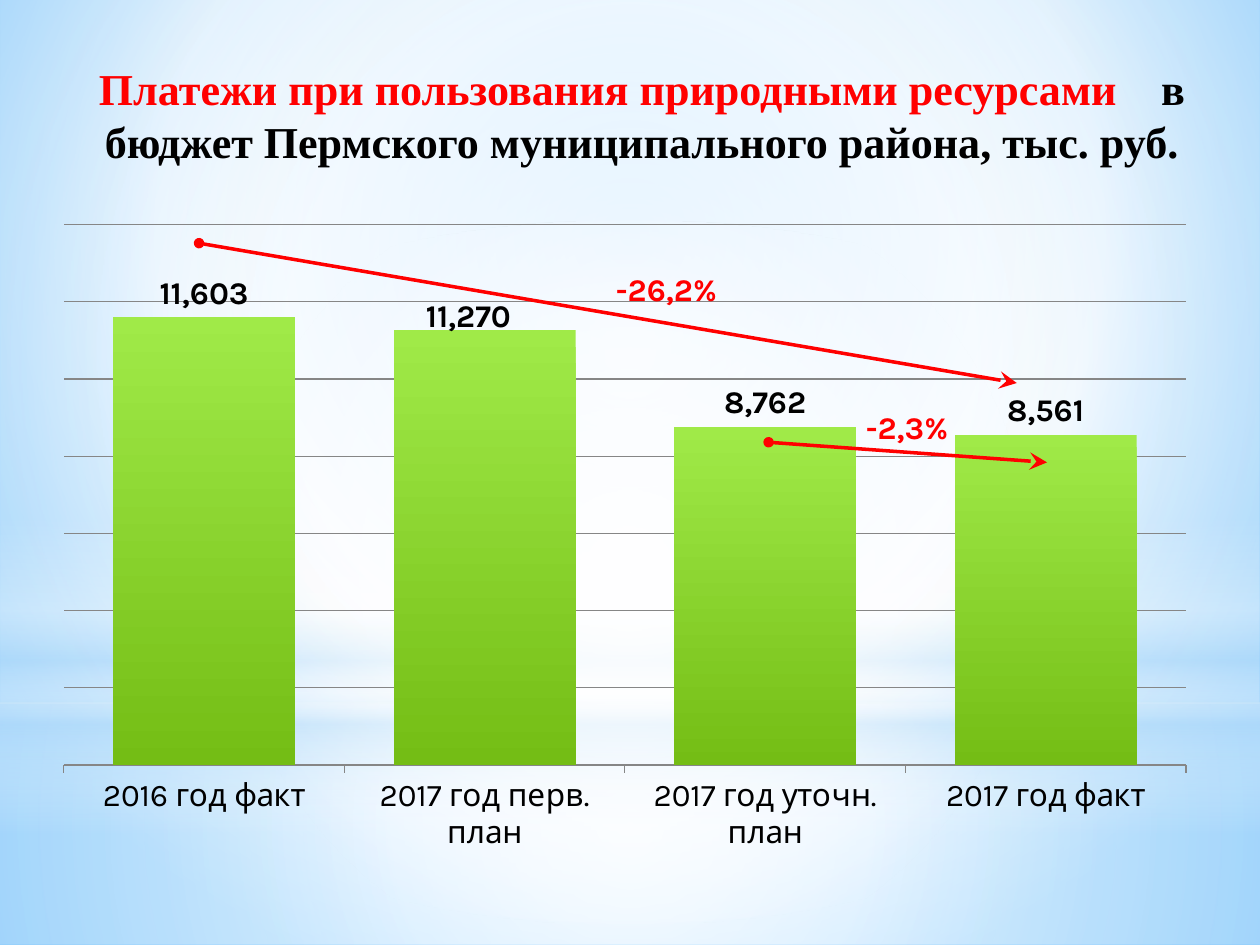
from lxml.etree import SubElement
from pptx import Presentation
from pptx.chart.data import CategoryChartData
from pptx.dml.color import RGBColor
from pptx.enum.chart import XL_CHART_TYPE as ChartType, XL_LABEL_POSITION as LabelPosition
from pptx.enum.chart import XL_TICK_LABEL_POSITION as TickLabels, XL_TICK_MARK as TickMark
from pptx.enum.shapes import MSO_CONNECTOR as Connector, MSO_SHAPE as Shape
from pptx.enum.text import MSO_ANCHOR as Anchor, PP_ALIGN as Align
from pptx.oxml.ns import qn
from pptx.util import Inches, Pt

BLACK = RGBColor(0x00, 0x00, 0x00)
RED = RGBColor(0xFF, 0x00, 0x00)
WHITE = RGBColor(0xFF, 0xFF, 0xFF)
GRAY = RGBColor(0x86, 0x86, 0x86)
SKY = RGBColor(0x9E, 0xD5, 0xFF)
DEEP_SKY = RGBColor(0x5B, 0xB9, 0xFF)
PALE_BLUE = RGBColor(0xB4, 0xDC, 0xFA)
LIGHT_GREEN = RGBColor(0xA0, 0xEA, 0x48)
GREEN = RGBColor(0x74, 0xBD, 0x15)
BODY_FONT, TITLE_FONT = "Karla", "Times New Roman"
CENTER = (50, 50, 50, 50)


def add_node(parent, tag, **attributes):
    return SubElement(parent, qn(tag), {name: str(value) for name, value in attributes.items()})


def set_gradient(fill, owner, stops, focus=None):
    """Stops are (position, colour, opacity); without a focus the fill runs downwards."""
    fill.solid()
    solid = next(owner.iter(qn("a:solidFill")))
    gradient = add_node(solid.getparent(), "a:gradFill", rotWithShape=1)
    solid.getparent().replace(solid, gradient)
    stop_list = add_node(gradient, "a:gsLst")
    for position, color, opacity in stops:
        stop = add_node(stop_list, "a:gs", pos=position * 1000)
        add_node(add_node(stop, "a:srgbClr", val=color), "a:alpha", val=opacity * 1000)
    if focus:
        shade = add_node(gradient, "a:path", path="circle")
        sides = {side: share * 1000 for side, share in zip("ltrb", focus)}
        add_node(shade, "a:fillToRect", **sides)
    else:
        add_node(gradient, "a:lin", ang=5400000, scaled=0)


def add_backdrop(page):
    backdrop = [(0, SKY, 100), (60, WHITE, 100), (100, DEEP_SKY, 100)]
    set_gradient(page.background.fill, page.element, backdrop, (20, 10, 20, 60))
    layers = [
        (Shape.RECTANGLE, 5.58, 1.92, CENTER,
         [(0, WHITE, 91), (37, WHITE, 76), (100, PALE_BLUE, 79)]),
        (Shape.RECTANGLE, 0, 5.58, CENTER,
         [(0, WHITE, 89), (48, WHITE, 62), (100, PALE_BLUE, 79)]),
        (Shape.RECTANGLE, 4.12, 2.5, None,
         [(0, WHITE, 0), (29, WHITE, 30), (45, PALE_BLUE, 40),
          (55, WHITE, 26), (65, PALE_BLUE, 60), (100, WHITE, 0)]),
        (Shape.OVAL, 1.75, 5.58, CENTER, [(0, WHITE, 100), (56, WHITE, 0)]),
    ]
    for kind, top, height, focus, stops in layers:
        layer = page.shapes.add_shape(kind, 0, Inches(top), Inches(10), Inches(height))
        layer.shadow.inherit = False
        layer.line.fill.background()
        set_gradient(layer.fill, layer.element.spPr, stops, focus)


def add_title(page, left, top, width, height):
    box = page.shapes.add_textbox(left, top, width, height)
    frame = box.text_frame
    frame.word_wrap = True
    frame.vertical_anchor = Anchor.MIDDLE
    para = frame.paragraphs[0]
    para.alignment = Align.CENTER
    para.font.name, para.font.size, para.font.bold = TITLE_FONT, Pt(25.2), True
    parts = [
        ("Платежи при пользования природными ресурсами", RED),
        (" ", RED),
        ("в бюджет Пермского муниципального района, тыс. руб.", BLACK),
    ]
    for text, color in parts:
        span = para.add_run()
        span.text = text
        span.font.color.rgb = color
    # One widened space parts the red words from the black ones
    para.runs[1].font._element.set("spc", "1900")


def add_layout(parent, index, **settings):
    layout = add_node(parent, "c:layout")
    manual = add_node(layout, "c:manualLayout")
    for name, value in settings.items():
        add_node(manual, f"c:{name}", val=value)
    parent.insert(index, layout)


def add_payment_chart(page, left, top, width, height):
    data = CategoryChartData(number_format="#,##0")
    data.categories = ["2016 год факт", "2017 год перв. план",
                       "2017 год уточн. план", "2017 год факт"]
    data.add_series("Series 1", (11603, 11270, 8762, 8561))
    chart = page.shapes.add_chart(
        ChartType.COLUMN_CLUSTERED, left, top, width, height, data).chart
    chart.has_legend = chart.has_title = False
    chart.font.name, chart.font.size = BODY_FONT, Pt(18)
    chart.font.color.rgb = BLACK

    # Axes
    values = chart.value_axis
    values.minimum_scale, values.maximum_scale, values.major_unit = 0, 14000, 2000
    values.has_major_gridlines = True
    values.major_gridlines.format.line.color.rgb = GRAY
    values.tick_labels.number_format = "#,##0"
    values.visible = False
    categories = chart.category_axis
    categories.major_tick_mark = TickMark.OUTSIDE
    categories.tick_label_position = TickLabels.LOW
    categories.format.line.color.rgb = GRAY

    # Columns and their labels
    plot = chart.plots[0]
    plot.gap_width = 54
    plot.vary_by_categories = False
    series = plot.series[0]
    set_gradient(series.format.fill, series._element,
                 [(0, LIGHT_GREEN, 100), (100, GREEN, 100)])
    labels = series.data_labels
    labels.show_value = True
    labels.number_format, labels.number_format_is_linked = "#,##0", False
    second_label = series.points[1].data_label
    for label in (labels, second_label):
        label.position = LabelPosition.OUTSIDE_END
        label.font.name, label.font.size, label.font.bold = BODY_FONT, Pt(18), True
        label.font.color.rgb = BLACK

    # The second label sits a little lower and to the left
    add_layout(next(series._element.iter(qn("c:dLbl"))), 1, x=-0.014, y=0.015)
    area = chart._chartSpace.chart.plotArea
    for old in area.findall(qn("c:layout")):
        area.remove(old)
    add_layout(area, 0, layoutTarget="inner", xMode="edge", yMode="edge",
               x=0.017, y=0.047, w=0.967, h=0.799)


def add_change(page, start, end, text, left, top, width, height, align):
    arrow = page.shapes.add_connector(
        Connector.STRAIGHT, *(Inches(value) for value in start + end))
    arrow.line.color.rgb = RED
    arrow.line.width = Pt(2)
    outline = arrow.line._get_or_add_ln()
    add_node(outline, "a:headEnd", type="oval")
    add_node(outline, "a:tailEnd", type="stealth", w="lg", len="lg")
    add_node(arrow._element.spPr, "a:effectLst")

    box = page.shapes.add_textbox(left, top, width, height)
    box.text_frame.word_wrap = True
    para = box.text_frame.paragraphs[0]
    para.text = text
    para.alignment = align
    para.font.name, para.font.size, para.font.bold = BODY_FONT, Pt(18), True
    para.font.color.rgb = RED


def main():
    deck = Presentation()
    deck.slide_width, deck.slide_height = Inches(10), Inches(7.5)
    page = deck.slides.add_slide(deck.slide_layouts[6])
    add_backdrop(page)
    add_title(page, Inches(0.35), Inches(0.29), Inches(9.49), Inches(1.23))
    add_payment_chart(page, Inches(0.35), Inches(1.53), Inches(9.21), Inches(5.37))
    add_change(page, (1.58, 1.93), (8.07, 3.04), "-26,2%",
               Inches(4.79), Inches(2.09), Inches(1.18), Inches(0.4), Align.LEFT)
    add_change(page, (6.1, 3.51), (8.31, 3.67), "-2,3%",
               Inches(6.73), Inches(3.19), Inches(0.94), Inches(0.4), Align.CENTER)
    deck.save("out.pptx")


if __name__ == "__main__":
    main()
